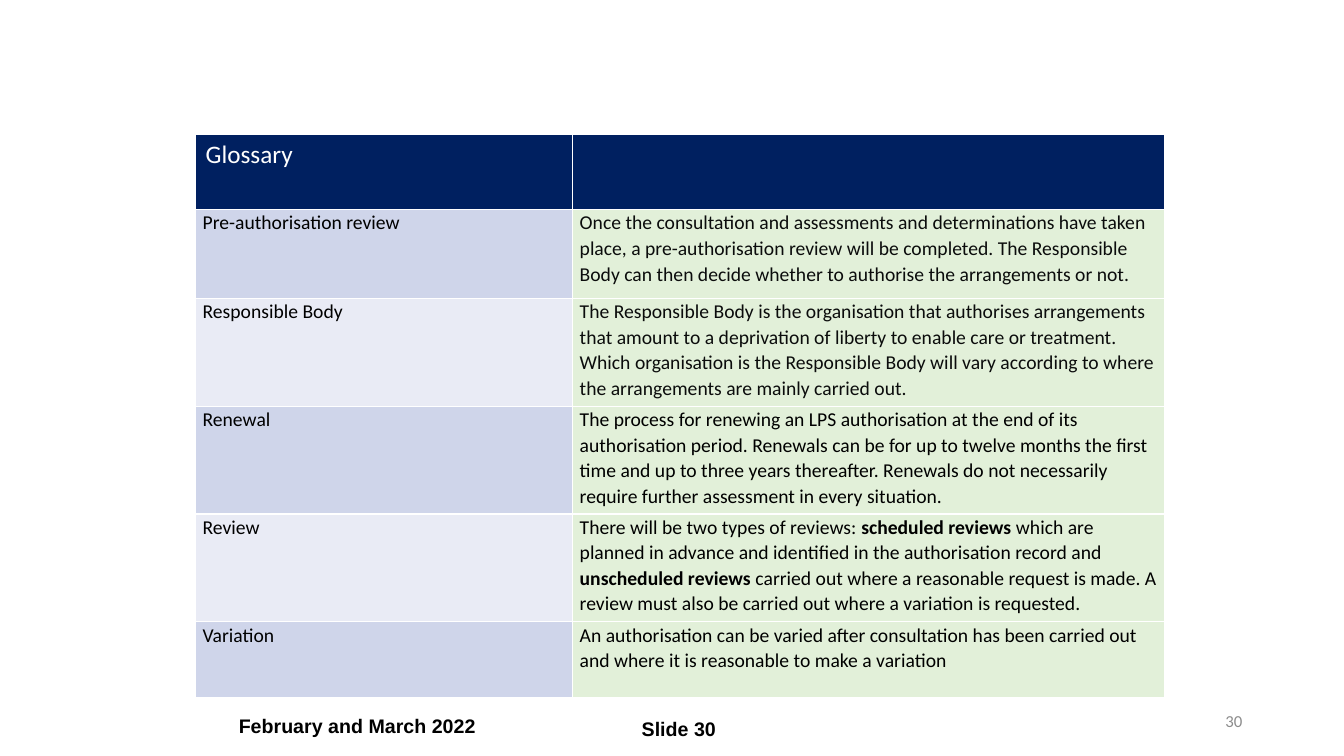
from lxml.etree import SubElement
from pptx import Presentation
from pptx.dml.color import RGBColor
from pptx.enum.text import MSO_ANCHOR as Anchor, PP_ALIGN as Align
from pptx.oxml.ns import qn
from pptx.util import Inches, Pt

COLORS = {
    "white": "FFFFFF", "navy": "002060", "black": "000000", "ink": "0B0C0C",
    "band_dark": "CFD5EA", "band_light": "E9EBF5", "green": "E2F0D9", "gray": "8C8C8C",
}
COLUMN_WIDTHS = (3.74, 5.87)
ROW_HEIGHTS = (0.75, 0.88, 1.07, 1.07, 1.07, 0.75)
GLOSSARY = [
    ("Pre-authorisation review", "ink",
     ["Once the consultation and assessments and determinations have taken place, "
      "a pre-authorisation review will be completed. The Responsible Body can then "
      "decide whether to authorise the arrangements or not."]),
    ("Responsible Body", "ink",
     ["The Responsible Body is the organisation that authorises arrangements that "
      "amount to a deprivation of liberty to enable care or treatment. Which "
      "organisation is the Responsible Body will vary according to where the "
      "arrangements are mainly carried out."]),
    ("Renewal", "black",
     ["The process for renewing an LPS authorisation at the end of its authorisation "
      "period. Renewals can be for up to twelve months the first time and up to three "
      "years thereafter. Renewals do not necessarily require further assessment in "
      "every situation."]),
    ("Review", "black",
     ["There will be two types of reviews: ", "scheduled reviews",
      " which are planned in advance and identified in the authorisation record and ",
      "unscheduled reviews",
      " carried out where a reasonable request is made. A review must also be carried "
      "out where a variation is requested."]),
    ("Variation", "black",
     ["An authorisation can be varied after consultation has been carried out and "
      "where it is reasonable to make a variation"]),
]


def rgb(name):
    return RGBColor.from_string(COLORS[name])


def add_span(para, text, size, color, bold=False, font="Calibri"):
    span = para.add_run()
    span.text = text
    span.font.name, span.font.size, span.font.bold = font, Pt(size), bold
    span.font.color.rgb = rgb(color)


def style_cell(cell, fill):
    cell.fill.solid()
    cell.fill.fore_color.rgb = rgb(fill)
    properties = cell._tc.get_or_add_tcPr()
    for index, side in enumerate(("lnL", "lnR", "lnT", "lnB")):
        line = properties.makeelement(qn(f"a:{side}"), {"w": str(Pt(1))})
        solid = SubElement(line, qn("a:solidFill"))
        SubElement(solid, qn("a:srgbClr"), val=COLORS["white"])
        properties.insert(index, line)


def fill_entry(cell, parts, color, fill):
    style_cell(cell, fill)
    cell.margin_left = cell.margin_right = Inches(0.07)
    cell.margin_top = cell.margin_bottom = 0
    para = cell.text_frame.paragraphs[0]
    para.line_spacing, para.space_after = 1.07, Pt(8)
    for index, part in enumerate(parts):
        add_span(para, part, 14, color, bold=index % 2 == 1)


def add_glossary(page, left, top):
    frame = page.shapes.add_table(
        len(ROW_HEIGHTS), len(COLUMN_WIDTHS), Inches(left), Inches(top),
        Inches(sum(COLUMN_WIDTHS)), Inches(sum(ROW_HEIGHTS)))
    table = frame.table
    for column, width in zip(table.columns, COLUMN_WIDTHS):
        column.width = Inches(width)
    for row, height in zip(table.rows, ROW_HEIGHTS):
        row.height = Inches(height)
    for cell in table.rows[0].cells:
        style_cell(cell, "navy")
    add_span(table.cell(0, 0).text_frame.paragraphs[0], "Glossary", 18, "white")
    for row, (term, color, meaning) in enumerate(GLOSSARY, start=1):
        band = "band_dark" if row % 2 else "band_light"
        fill_entry(table.cell(row, 0), [term], "black", band)
        fill_entry(table.cell(row, 1), meaning, color, "green")


def add_label(page, box, text, size, color, bold, font, align, anchor=Anchor.TOP):
    frame = page.shapes.add_textbox(*map(Inches, box)).text_frame
    frame.word_wrap = True
    frame.vertical_anchor = anchor
    para = frame.paragraphs[0]
    para.alignment = align
    add_span(para, text, size, color, bold, font)


def add_footer(page, top):
    add_label(page, (2.27, top + 0.08, 2.66, 0.32), "February and March 2022",
              14, "black", True, "Arial", Align.LEFT)
    add_label(page, (4.87, top + 0.11, 2.33, 0.32), "Slide 30",
              14, "black", True, "Arial", Align.RIGHT)
    add_label(page, (9.42, top, 3, 0.4), "30",
              12, "gray", False, "Calibri", Align.RIGHT, Anchor.MIDDLE)


def main():
    deck = Presentation()
    deck.slide_width, deck.slide_height = Inches(13.33), Inches(7.5)
    page = deck.slides.add_slide(deck.slide_layouts[6])
    add_glossary(page, 1.94, 1.33)
    add_footer(page, 6.95)
    deck.save("out.pptx")


if __name__ == "__main__":
    main()
